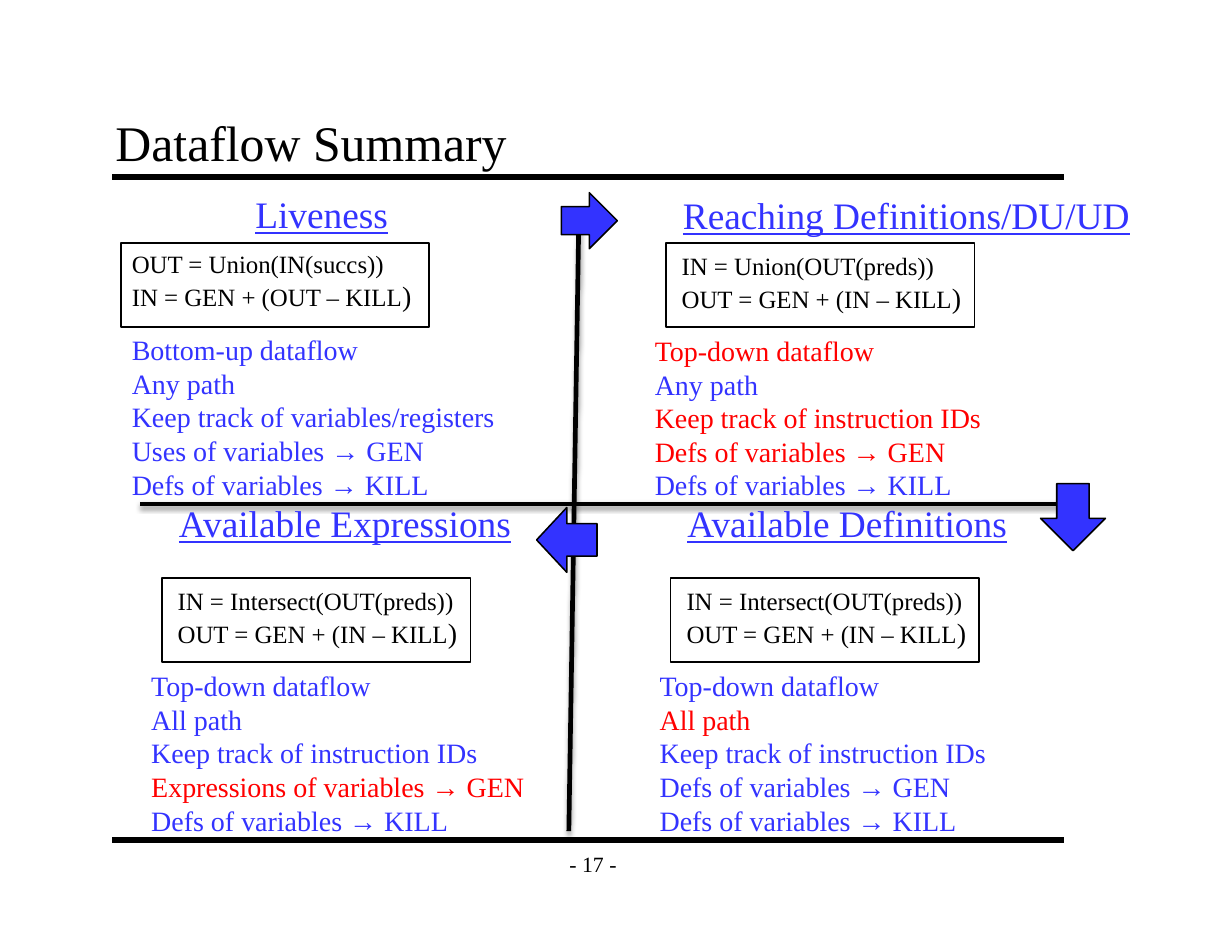
from dataclasses import dataclass
from lxml.etree import SubElement
from pptx import Presentation
from pptx.dml.color import RGBColor
from pptx.enum.shapes import MSO_CONNECTOR, MSO_SHAPE
from pptx.enum.text import MSO_ANCHOR, MSO_AUTO_SIZE, PP_ALIGN
from pptx.oxml.ns import qn
from pptx.util import Cm, Pt


@dataclass(frozen=True)
class Theme:
    font: str = "Times New Roman"
    black: RGBColor = RGBColor(0x00, 0x00, 0x00)
    blue: RGBColor = RGBColor(0x33, 0x33, 0xFF)
    red: RGBColor = RGBColor(0xFF, 0x00, 0x00)
    title: int = 32
    heading: int = 24
    body: int = 18
    equation: int = 16
    footer: int = 14


theme = Theme()
deck = Presentation()
deck.slide_width, deck.slide_height = Cm(27.94), Cm(21.59)
slide = deck.slides.add_slide(deck.slide_layouts[6])


def add_text(left, top, width, height, lines, underline=None):
    box = slide.shapes.add_textbox(Cm(left), Cm(top), Cm(width), Cm(height))
    frame = box.text_frame
    frame.word_wrap = False
    frame.auto_size = MSO_AUTO_SIZE.SHAPE_TO_FIT_TEXT
    for index, line in enumerate(lines):
        paragraph = frame.paragraphs[0] if index == 0 else frame.add_paragraph()
        for words, size, color in line:
            run = paragraph.add_run()
            run.text = words
            run.font.name = theme.font
            run.font.size = Pt(size)
            run.font.color.rgb = color
            run.font.underline = underline
    return frame


def add_rule(x1, y1, x2, y2, weight, shadow=False):
    rule = slide.shapes.add_connector(MSO_CONNECTOR.STRAIGHT, Cm(x1), Cm(y1), Cm(x2), Cm(y2))
    rule.line.color.rgb = theme.black
    rule.line.width = Pt(weight)
    effects = SubElement(rule._element.spPr, qn("a:effectLst"))
    if shadow:
        outer = SubElement(effects, qn("a:outerShdw"), blurRad=str(Pt(3.1)), dist=str(Pt(1.8)),
                           dir="5400000", rotWithShape="0")
        tint = SubElement(outer, qn("a:srgbClr"), val=str(theme.black))
        SubElement(tint, qn("a:alpha"), val="35000")


for rule_y in (4.01, 19.05):
    add_rule(2.54, rule_y, 24.13, rule_y, 4)

title = add_text(2.34, 2.34, 21.59, 1.7, [[("Dataflow Summary", theme.title, theme.black)]])
title.word_wrap = True
page_number = add_text(12.5, 19.05, 1.9, 1.07, [[("- 17 -", theme.footer, theme.black)]])
page_number.paragraphs[0].alignment = PP_ALIGN.CENTER
for frame, anchor in ((title, MSO_ANCHOR.BOTTOM), (page_number, MSO_ANCHOR.MIDDLE)):
    frame.auto_size = MSO_AUTO_SIZE.NONE
    frame.vertical_anchor = anchor
    frame.margin_left = frame.margin_right = Cm(0.28)
    frame.margin_top = frame.margin_bottom = Cm(0.15)

add_rule(3.18, 11.43, 24.33, 11.43, 3, shadow=True)
add_rule(13.13, 4.78, 12.9, 18.85, 3, shadow=True)

analyses = [
    ("Liveness", (5.54, 4.22, 3.56), (2.74, 5.51), (2.74, 5.51), (2.74, 7.42, 8.84),
     ("OUT = Union(IN(succs))", "IN = GEN + (OUT – KILL"),
     ("Bottom-up dataflow", "Any path", "Keep track of variables/registers",
      "Uses of variables → GEN", "Defs of variables → KILL"), ()),
    ("Reaching Definitions/DU/UD", (15.24, 4.24, 10.74), (15.11, 5.51), (15.21, 5.56), (14.6, 7.44, 8),
     ("IN = Union(OUT(preds))", "OUT = GEN + (IN – KILL"),
     ("Top-down dataflow", "Any path", "Keep track of instruction IDs",
      "Defs of variables → GEN", "Defs of variables → KILL"), (0, 2, 3)),
    ("Available Definitions", (15.34, 11.23, 7.82), (15.21, 13.11), (15.32, 13.16), (14.71, 15.04, 8),
     ("IN = Intersect(OUT(preds))", "OUT = GEN + (IN – KILL"),
     ("Top-down dataflow", "All path", "Keep track of instruction IDs",
      "Defs of variables → GEN", "Defs of variables → KILL"), (1,)),
    ("Available Expressions", (3.81, 11.23, 8.1), (3.68, 13.11), (3.78, 13.16), (3.18, 15.04, 9.04),
     ("IN = Intersect(OUT(preds))", "OUT = GEN + (IN – KILL"),
     ("Top-down dataflow", "All path", "Keep track of instruction IDs",
      "Expressions of variables → GEN", "Defs of variables → KILL"), (3,)),
]
for name, name_at, border_at, equations_at, facts_at, equations, facts, changed in analyses:
    add_text(*name_at, 1.3, [[(name, theme.heading, theme.blue)]], underline=True)
    border = slide.shapes.add_shape(MSO_SHAPE.RECTANGLE, *map(Cm, border_at), Cm(6.99), Cm(1.91))
    border.shadow.inherit = False
    border.fill.background()
    border.line.color.rgb = theme.black
    border.line.width = Pt(1)
    meet, transfer = equations
    add_text(*equations_at, 6.86, 1.7, [
        [(meet, theme.equation, theme.black)],
        [(transfer, theme.equation, theme.black), (")", theme.body, theme.black)],
    ])
    add_text(*facts_at, 4.09, [
        [(fact, theme.body, theme.red if index in changed else theme.blue)]
        for index, fact in enumerate(facts)
    ])

for direction, left, top, width, height in (
    (MSO_SHAPE.RIGHT_ARROW, 12.73, 4.37, 1.27, 1.27),
    (MSO_SHAPE.DOWN_ARROW, 23.6, 10.97, 1.47, 1.52),
    (MSO_SHAPE.LEFT_ARROW, 12.17, 11.51, 1.37, 1.47),
):
    arrow = slide.shapes.add_shape(direction, Cm(left), Cm(top), Cm(width), Cm(height))
    arrow.shadow.inherit = False
    arrow.fill.solid()
    arrow.fill.fore_color.rgb = theme.blue
    arrow.line.color.rgb = theme.black
    arrow.line.width = Pt(1)

deck.save("out.pptx")
